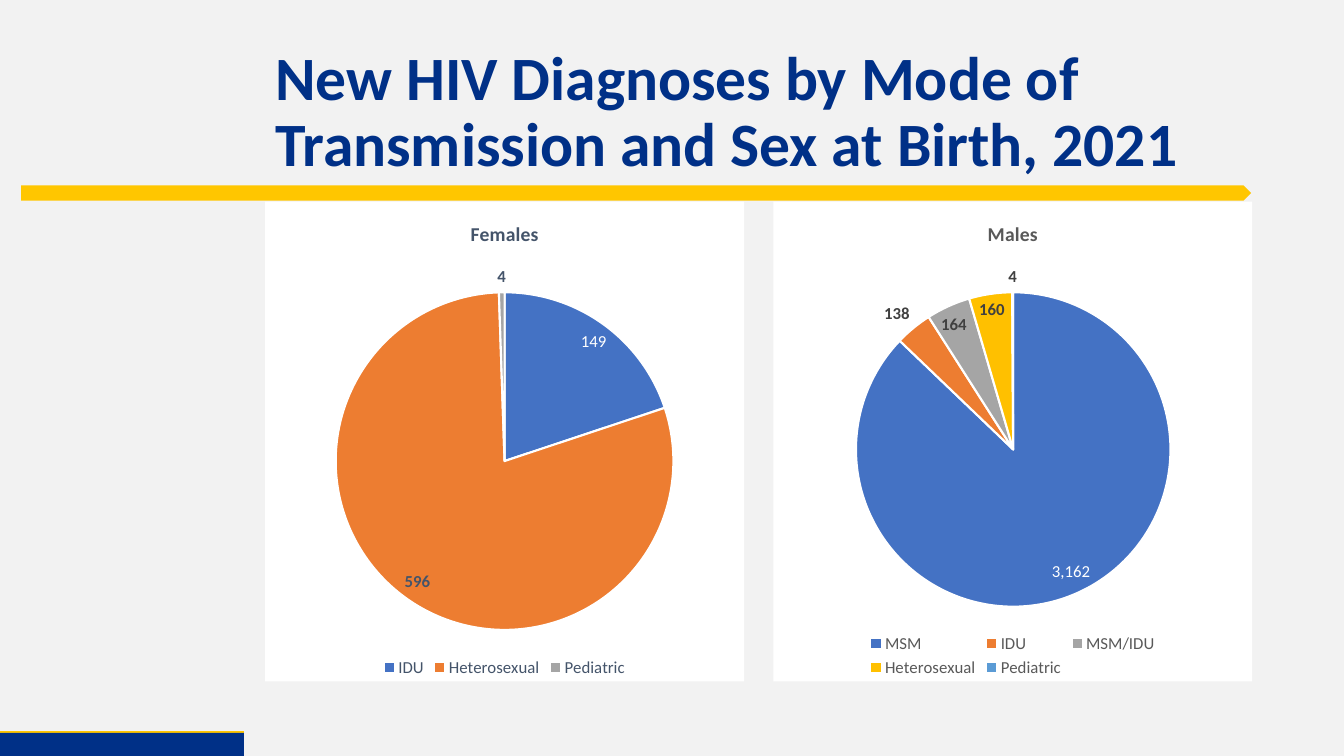
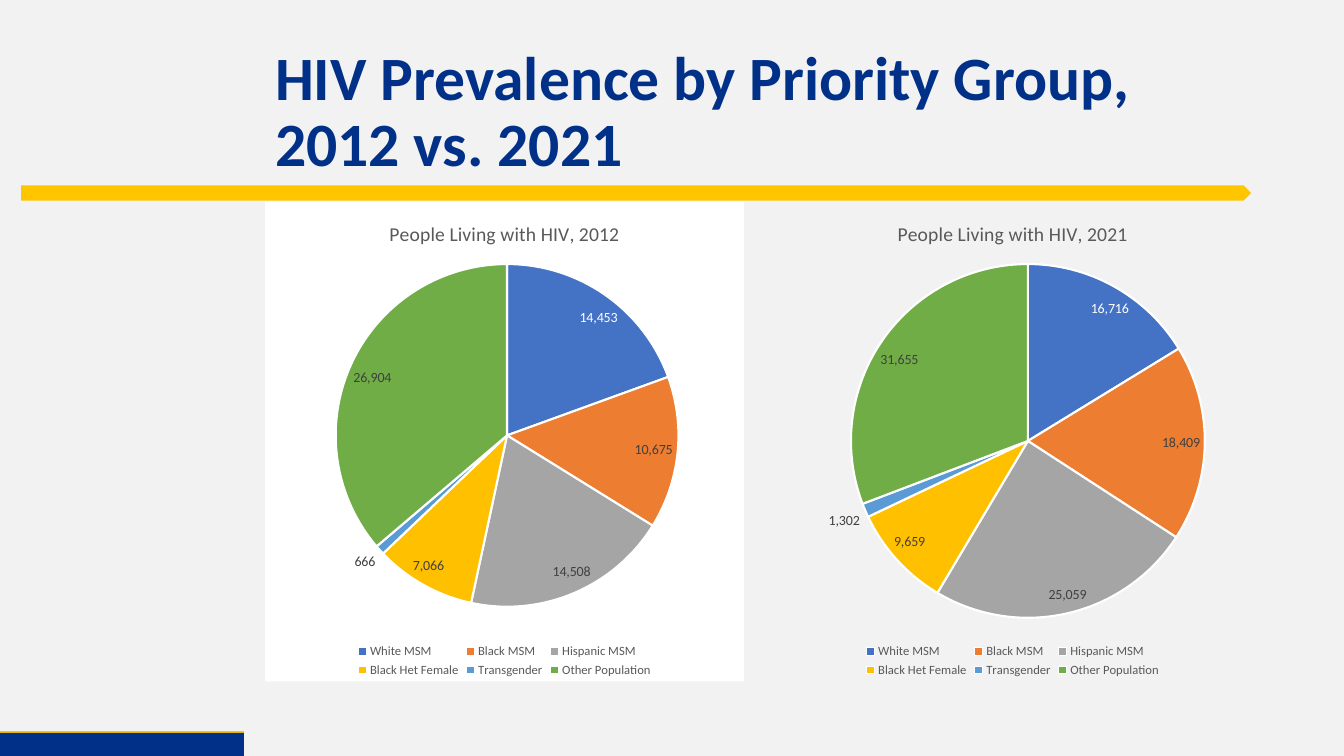
from lxml import etree
from pptx import Presentation
from pptx import util as u
from pptx.chart import data as chart_data
from pptx.dml.color import RGBColor
from pptx.enum import chart as charts, shapes, text
from pptx.oxml import parse_xml
from pptx.oxml.ns import nsdecls, qn

COLOURS = {
    "page": "F2F2F2", "gold": "FFC600", "navy": "003087", "white": "FFFFFF",
    "slate": "44546A", "grey": "595959", "dark": "404040",
}
SLICES = ["4472C4", "ED7D31", "A5A5A5", "FFC000", "5B9BD5", "70AD47"]
FONT = "Calibri"
LEFT, RIGHT, CHART_TOP = 2.63, 7.67, 2.0
CHART_WIDTH, CHART_HEIGHT = 4.75, 4.76


def rgb(name):
    return RGBColor.from_string(COLOURS.get(name, name))


def style_font(font, size, colour, bold=False):
    font.name = FONT
    font.size = u.Pt(size)
    font.bold = bold
    font.color.rgb = rgb(colour)


class Deck:
    def __init__(self):
        self.prs = Presentation()
        self.prs.slide_width = u.Inches(13.33)
        self.prs.slide_height = u.Inches(7.5)
        self.slide = None

    def new_slide(self, *title_lines):
        self.slide = self.prs.slides.add_slide(self.prs.slide_layouts[6])
        background = self.slide.background.fill
        background.solid()
        background.fore_color.rgb = rgb("page")
        self.band(shapes.MSO_SHAPE.PENTAGON, "gold", 0.21, 1.84, 12.2, 0.15)
        self.rule("gold", 0, 7.27, 2.42)
        self.band(shapes.MSO_SHAPE.RECTANGLE, "navy", 0, 7.27, 2.42, 0.23)
        self.title(title_lines)

    def band(self, preset, colour, left, top, width, height):
        band = self.slide.shapes.add_shape(preset, *map(u.Inches, (left, top, width, height)))
        band.shadow.inherit = False
        band.fill.solid()
        band.fill.fore_color.rgb = rgb(colour)
        band.line.fill.background()

    def rule(self, colour, left, top, width):
        rule = self.slide.shapes.add_connector(
            shapes.MSO_CONNECTOR.STRAIGHT, *map(u.Inches, (left, top, left + width, top)))
        rule.line.color.rgb = rgb(colour)
        rule.line.width = u.Pt(3)
        etree.SubElement(rule._element.spPr, qn("a:effectLst"))

    def title(self, lines):
        box = self.slide.shapes.add_textbox(*map(u.Inches, (LEFT, 0.4, 9.79, 1.45)))
        frame = box.text_frame
        frame.word_wrap = True
        frame.vertical_anchor = text.MSO_ANCHOR.MIDDLE
        heading = frame.paragraphs[0]
        heading.line_spacing = 0.9
        for index, line in enumerate(lines):
            if index:
                heading.add_line_break()
            run = heading.add_run()
            run.text = line
            style_font(run.font, 44, "navy", True)

    def pie(self, left, heading, counts, pie_box, size, legend_size,
            colour="grey", label_colour="dark", bold=False, fill="white"):
        data = chart_data.CategoryChartData(number_format="#,##0")
        data.categories = list(counts)
        data.add_series("Series 1", list(counts.values()))
        chart = self.slide.shapes.add_chart(
            charts.XL_CHART_TYPE.PIE,
            *map(u.Inches, (left, CHART_TOP, CHART_WIDTH, CHART_HEIGHT)), data).chart
        style_font(chart.font, size, label_colour, bold)

        chart.has_title = True
        run = chart.chart_title.text_frame.paragraphs[0].add_run()
        run.text = heading
        style_font(run.font, 14, colour, bold)

        chart.has_legend = True
        chart.legend.position = charts.XL_LEGEND_POSITION.BOTTOM
        chart.legend.include_in_layout = False
        style_font(chart.legend.font, legend_size, colour)

        plot = chart.plots[0]
        plot.vary_by_categories = True
        series = plot.series[0]
        labels = series.data_labels
        labels.show_value = True
        labels.number_format = "#,##0"
        labels.number_format_is_linked = False
        labels.position = charts.XL_LABEL_POSITION.BEST_FIT
        style_font(labels.font, size, label_colour, bold)
        for index, slice_colour in enumerate(SLICES[:len(counts)]):
            slice_format = series.points[index].format
            slice_format.fill.solid()
            slice_format.fill.fore_color.rgb = rgb(slice_colour)
            slice_format.line.color.rgb = rgb("white")
            slice_format.line.width = u.Pt(1.5)
        first_label = series.points[0].data_label
        style_font(first_label.font, size, "white")
        first_label.position = charts.XL_LABEL_POSITION.BEST_FIT

        self.place_pie(chart, *pie_box)
        self.chart_background(chart, fill)

    def place_pie(self, chart, left, top, diameter):
        area = chart._chartSpace.chart.plotArea
        for old in area.findall(qn("c:layout")):
            area.remove(old)
        sizes = {"x": left / CHART_WIDTH, "y": top / CHART_HEIGHT,
                 "w": diameter / CHART_WIDTH, "h": diameter / CHART_HEIGHT}
        modes = "".join(f'<c:{axis}Mode val="edge"/>' for axis in "xy")
        values = "".join(f'<c:{key} val="{value:.4f}"/>' for key, value in sizes.items())
        area.insert(0, parse_xml(
            f'<c:layout {nsdecls("c")}><c:manualLayout><c:layoutTarget val="inner"/>'
            f'{modes}{values}</c:manualLayout></c:layout>'))

    def chart_background(self, chart, fill):
        paint = (f'<a:solidFill><a:srgbClr val="{COLOURS[fill]}"/></a:solidFill>'
                 if fill else '<a:noFill/>')
        chart._chartSpace.chart.addnext(parse_xml(
            f'<c:spPr {nsdecls("c", "a")}>{paint}<a:ln><a:noFill/></a:ln></c:spPr>'))


def main():
    deck = Deck()

    deck.new_slide("New HIV Diagnoses by Mode of Transmission and Sex at Birth, 2021")
    deck.pie(LEFT, "Females", {"IDU": 149, "Heterosexual": 596, "Pediatric": 4},
             (0.7, 0.9, 3.35), 12, 12, colour="slate", label_colour="slate", bold=True)
    deck.pie(RIGHT, "Males",
             {"MSM": 3162, "IDU": 138, "MSM/IDU": 164, "Heterosexual": 160, "Pediatric": 4},
             (0.82, 0.9, 3.12), 12, 12, bold=True)

    deck.new_slide("HIV Prevalence by Priority Group, ", "2012 vs. 2021")
    groups = ["White MSM", "Black MSM", "Hispanic MSM",
              "Black Het Female", "Transgender", "Other Population"]
    living_2012 = [14453, 10675, 14508, 7066, 666, 26904]
    living_2021 = [16716, 18409, 25059, 9659, 1302, 31655]
    deck.pie(LEFT, "People Living with HIV, 2012", dict(zip(groups, living_2012)),
             (0.7, 0.62, 3.4), 10, 9)
    deck.pie(RIGHT, "People Living with HIV, 2021", dict(zip(groups, living_2021)),
             (0.77, 0.62, 3.51), 10, 9, fill=None)

    deck.prs.save("out.pptx")


if __name__ == "__main__":
    main()
